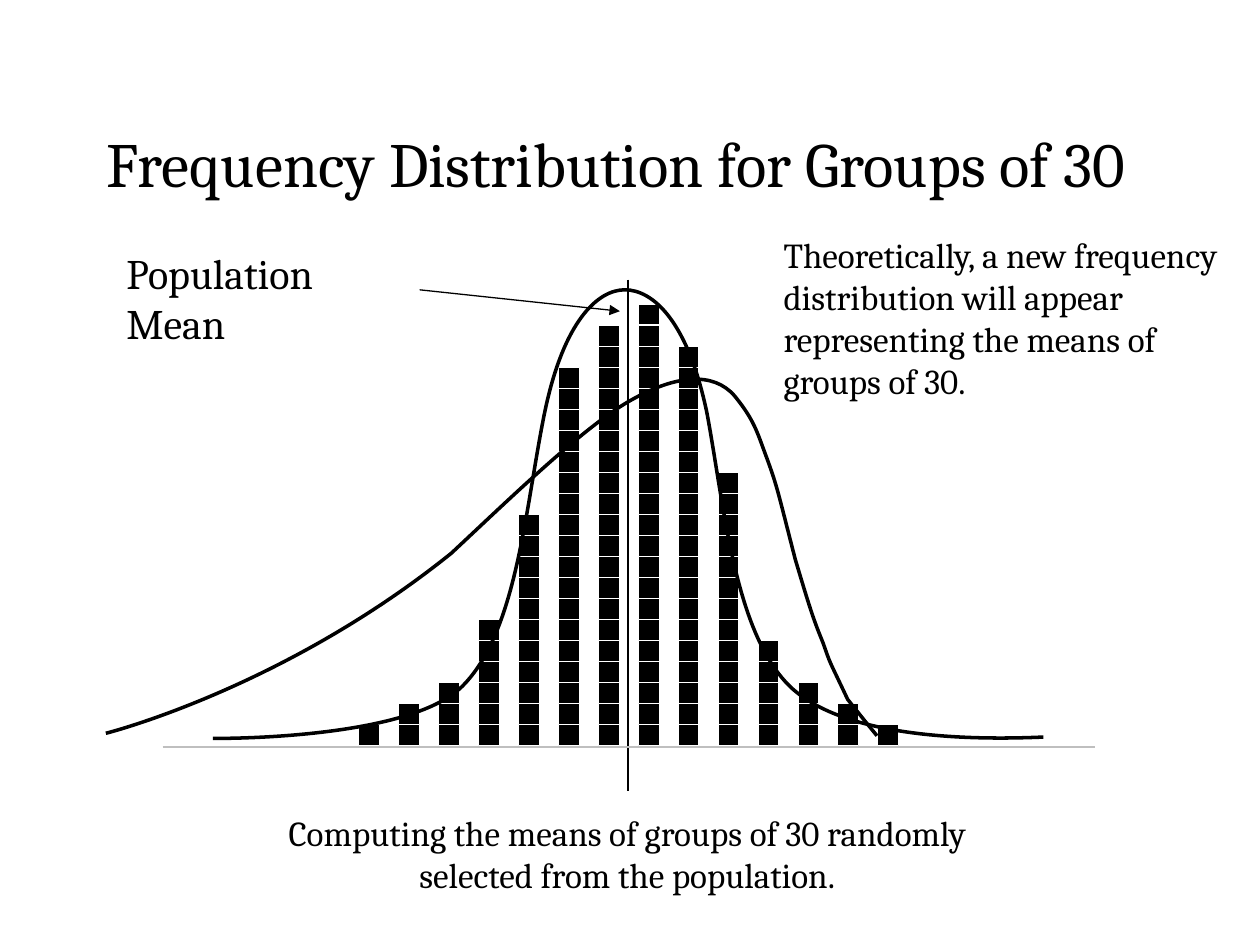
from lxml import etree
from pptx import Presentation
from pptx import util as u
from pptx.dml.color import RGBColor
from pptx.enum import shapes, text
from pptx.oxml import ns

BLACK = RGBColor(0x00, 0x00, 0x00)
WHITE = RGBColor(0xFF, 0xFF, 0xFF)
AXIS_GREY = RGBColor(0xBF, 0xBF, 0xBF)
SLIDE_WIDTH, SLIDE_HEIGHT = u.Inches(10), u.Inches(7.5)
COLUMN, ROW = SLIDE_WIDTH / 100, SLIDE_HEIGHT / 75

GROUP_COUNTS = [1, 2, 3, 6, 11, 18, 20, 21, 19, 13, 5, 3, 2, 1]
MEANS_CURVE = [
    (100, 100),
    (92.6, 100.6), (76.3, 100.8), (69.5, 88.7),
    (62.8, 76.6), (61.6, 48.5), (59.5, 27.6),
    (57.2, 7), (53, 0), (49.6, 0),
    (46.4, 0), (42.2, 6.8), (39.9, 27.9),
    (37.6, 49), (36.6, 76.6), (30, 88.7),
    (23.4, 100.8), (0, 100.3), (0, 100.3),
]
POPULATION_CURVE = [
    (100, 100),
    (98, 94.7), (99.3, 98.2), (96.2, 89.8),
    (93.5, 77.4), (94.1, 80.6), (93, 73.9),
    (91.8, 67.5), (91.5, 65.7), (89.4, 50.5),
    (87.1, 31.1), (87.1, 30.4), (85.8, 22.6),
    (84.5, 15.2), (84.2, 11.7), (81.5, 4.6),
    (78.8, -2.1), (74, -1.4), (68, 6),
    (61.9, 13.4), (52, 34.3), (44.8, 48.8),
    (22.9, 86.9), (0, 99.3), (0, 99.3),
]


def place(left, top, width, height):
    """Turn a box in grid columns and rows into slide lengths."""
    return [round(n * unit) for n, unit in
            ((left, COLUMN), (top, ROW), (width, COLUMN), (height, ROW))]


def apply(target, formats):
    """Set each named attribute of the target."""
    for name, value in formats.items():
        setattr(target, name, value)


def add_label(slide, box, wording, size, align=text.PP_ALIGN.LEFT,
              anchor=text.MSO_ANCHOR.TOP, fit=text.MSO_AUTO_SIZE.SHAPE_TO_FIT_TEXT):
    """Write one paragraph of text in the box."""
    frame = slide.shapes.add_textbox(*place(*box)).text_frame
    apply(frame, {"word_wrap": True, "vertical_anchor": anchor, "auto_size": fit})
    paragraph = frame.paragraphs[0]
    paragraph.alignment = align
    run = paragraph.add_run()
    run.text = wording
    apply(run.font, {"size": u.Pt(size), "name": "Cambria"})
    run.font.color.rgb = BLACK


def add_rule(slide, box, color, weight, arrow=False):
    """Draw a straight line from the box's top left to its bottom right."""
    left, top, width, height = place(*box)
    rule = slide.shapes.add_connector(
        shapes.MSO_CONNECTOR.STRAIGHT, left, top, left + width, top + height)
    rule.line.color.rgb = color
    rule.line.width = u.Pt(weight)
    if arrow:
        tail = etree.SubElement(rule.line._get_or_add_ln(), ns.qn("a:tailEnd"))
        tail.set("type", "triangle")
    etree.SubElement(rule._element.spPr, ns.qn("a:effectLst"))


def add_histogram(slide, box, counts):
    """Stack one square per group mean, in columns that fill the box."""
    left, top, width, height = box
    side = height / max(counts)
    step = (width - side) / (len(counts) - 1)
    for index, count in enumerate(counts):
        for level in range(1, count + 1):
            square = slide.shapes.add_shape(
                shapes.MSO_SHAPE.RECTANGLE,
                *place(left + index * step, top + height - level * side, side, side))
            square.shadow.inherit = False
            square.fill.solid()
            square.fill.fore_color.rgb = BLACK
            square.line.color.rgb = WHITE
            square.line.width = u.Pt(0.75)


def round_segments(curve):
    """Join each three straight segments into one cubic segment."""
    segments = list(curve._element.iter(ns.qn("a:lnTo")))
    for start in range(0, len(segments), 3):
        cubic = etree.Element(ns.qn("a:cubicBezTo"))
        segments[start].addprevious(cubic)
        for segment in segments[start:start + 3]:
            cubic.append(segment[0])
            segment.getparent().remove(segment)


def add_curve(slide, box, knots):
    """Draw an open curve whose knots are percentages of the box."""
    left, top, width, height = place(*box)
    points = [(left + x * width / 100, top + y * height / 100) for x, y in knots]
    builder = slide.shapes.build_freeform(*points[0])
    builder.add_line_segments(points[1:], close=False)
    curve = builder.convert_to_shape()
    round_segments(curve)
    curve.shadow.inherit = False
    curve.fill.background()
    curve.line.color.rgb = BLACK
    curve.line.width = u.Pt(2)


def main():
    """Build the slide and save it."""
    deck = Presentation()
    apply(deck, {"slide_width": SLIDE_WIDTH, "slide_height": SLIDE_HEIGHT})
    slide = deck.slides.add_slide(deck.slide_layouts[6])
    add_rule(slide, (49.85, 22.2, 0, 40.6), BLACK, 1)
    add_rule(slide, (12.9, 59.26, 74, 0), AXIS_GREY, 1)
    add_label(slide, (7.5, 6.65, 85, 12.5), "Frequency Distribution for Groups of 30",
              36, anchor=text.MSO_ANCHOR.MIDDLE, fit=text.MSO_AUTO_SIZE.NONE)
    add_label(slide, (9.05, 19.15, 25.1, 5), "Population Mean", 24)
    add_rule(slide, (33.3, 23, 15.9, 1.7), BLACK, 0.75, arrow=True)
    add_histogram(slide, (28.47, 24.14, 42.87, 35.06), GROUP_COUNTS)
    add_label(slide, (20.6, 63.9, 58.4, 7.7),
              "Computing the means of groups of 30 randomly selected from the population.",
              20, align=text.PP_ALIGN.CENTER)
    add_label(slide, (61.2, 18, 38.2, 14.5),
              "Theoretically, a new frequency distribution will appear "
              "representing the means of groups of 30.", 20)
    add_curve(slide, (16.9, 23, 65.9, 35.5), MEANS_CURVE)
    add_curve(slide, (8.4, 30.1, 61.2, 28.3), POPULATION_CURVE)
    deck.save("out.pptx")


if __name__ == "__main__":
    main()
